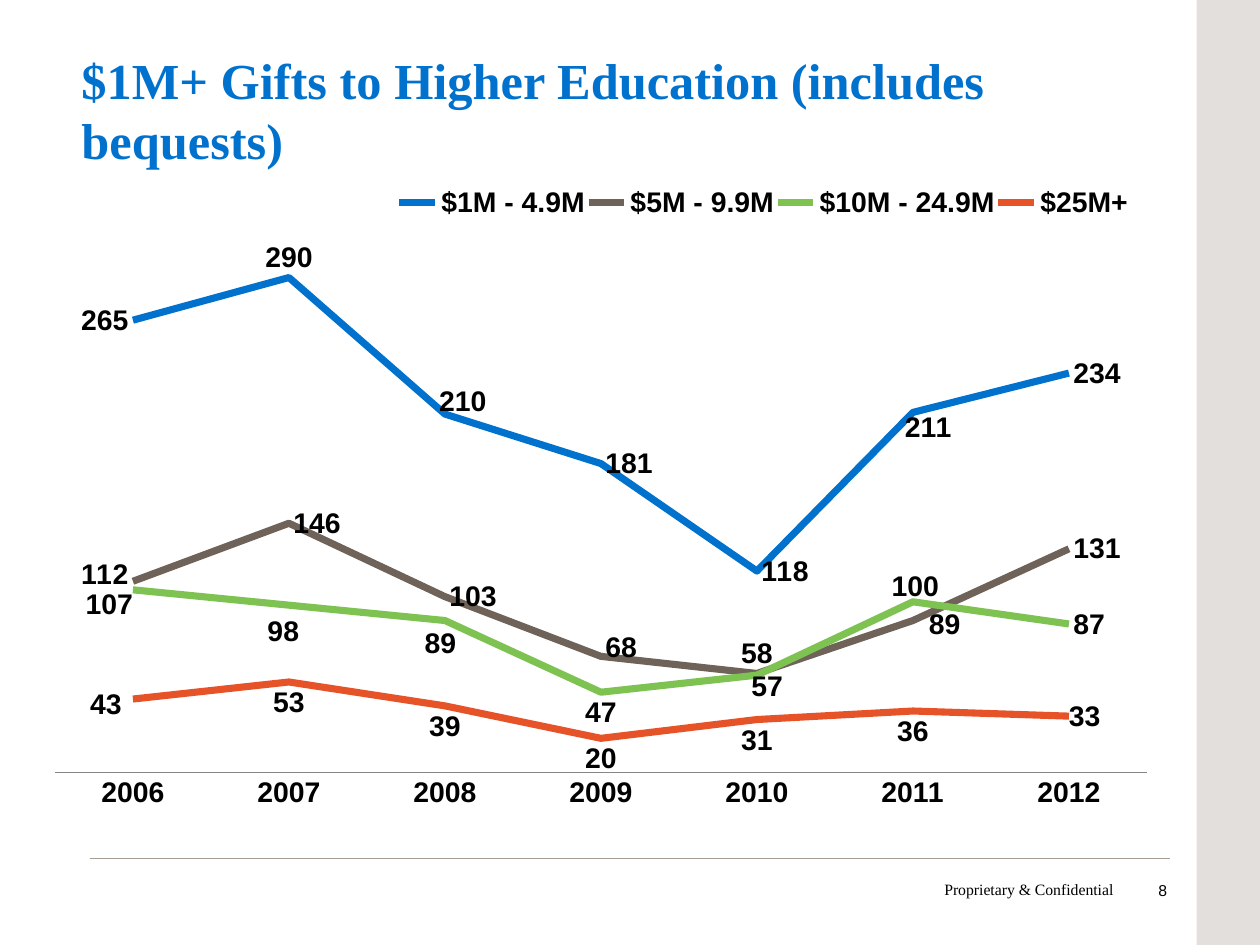
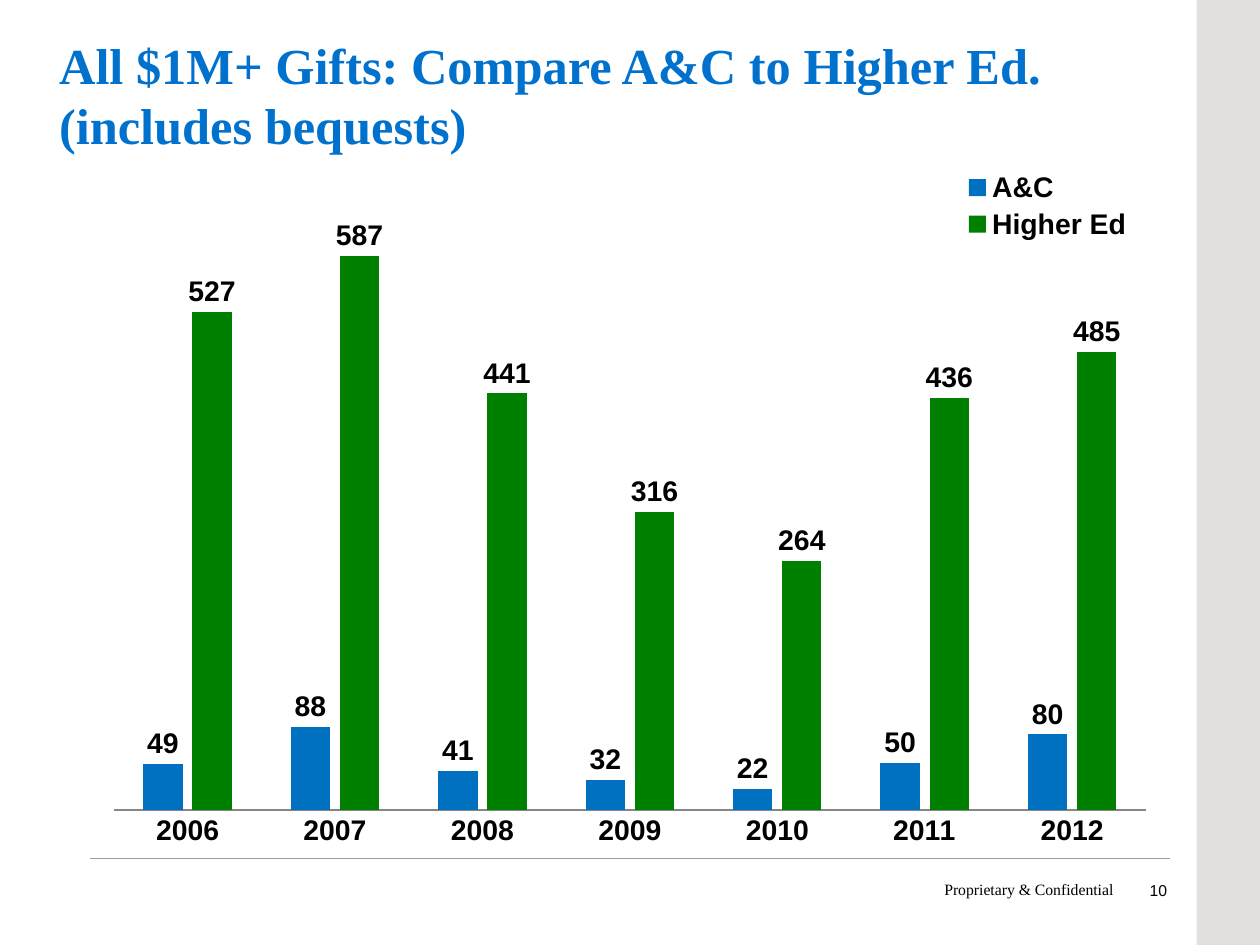
from pptx import Presentation
from pptx.chart.data import CategoryChartData
from pptx.dml.color import RGBColor
from pptx.enum.chart import XL_CHART_TYPE, XL_LABEL_POSITION, XL_LEGEND_POSITION, XL_MARKER_STYLE, XL_TICK_MARK
from pptx.enum.shapes import MSO_CONNECTOR, MSO_SHAPE
from pptx.enum.text import MSO_ANCHOR, MSO_AUTO_SIZE, PP_ALIGN
from pptx.oxml import parse_xml
from pptx.oxml.ns import nsdecls, qn
from pptx.util import Cm, Pt

SLIDE_WIDTH, SLIDE_HEIGHT = 28.22, 21.17
TITLE_BLUE, BLACK, BAND, RULE, AXIS = "0072CE", "000000", "E3DFDD", "A59C94", "868686"
SERIF, SANS = "Times New Roman", "Arial"
YEARS = [str(year) for year in range(2006, 2013)]
LEFT, RIGHT = XL_LABEL_POSITION.LEFT, XL_LABEL_POSITION.RIGHT
ABOVE, BELOW = XL_LABEL_POSITION.ABOVE, XL_LABEL_POSITION.BELOW

# Series: name, colour, values, default label position,
# and labels moved by point: position, shift right and down in percent of the chart
GIFT_SIZES = [
    ("$1M - 4.9M", "0072CE", (265, 290, 210, 181, 118, 211, 234), RIGHT,
     {0: (LEFT, 0, 0), 1: (ABOVE, 0, 0), 2: (RIGHT, -0.9, -1.8), 5: (RIGHT, -1.1, 2.1)}),
    ("$5M - 9.9M", "6E6259", (112, 146, 103, 68, 58, 89, 131), RIGHT,
     {0: (LEFT, 0, -0.9), 3: (RIGHT, 0, -1.2), 4: (ABOVE, 0, 0), 5: (RIGHT, 1, 0.6)}),
    ("$10M - 24.9M", "7EC352", (107, 98, 89, 47, 57, 100, 87), RIGHT,
     {0: (LEFT, 0.4, 2.1), 1: (BELOW, -0.5, 0.8), 2: (BELOW, -0.4, 0.4),
      3: (BELOW, 0, 0), 4: (BELOW, 0.9, -1.3), 5: (ABOVE, 0.2, 0.7)}),
    ("$25M+", "E75328", (43, 53, 39, 20, 31, 36, 33), BELOW,
     {0: (LEFT, -0.6, 0.7), 6: (RIGHT, -0.4, 0)}),
]
SECTORS = [
    ("A&C", "0070C0", (49, 88, 41, 32, 22, 50, 80), XL_LABEL_POSITION.OUTSIDE_END, {}),
    ("Higher Ed", "008000", (527, 587, 441, 316, 264, 436, 485), XL_LABEL_POSITION.OUTSIDE_END, {}),
]


def rgb(value):
    return RGBColor.from_string(value)


def box(left, top, width, height):
    return Cm(left), Cm(top), Cm(width), Cm(height)


def style_font(font, size=18, name=SANS, color=BLACK, bold=True):
    font.size, font.name, font.bold = Pt(size), name, bold
    font.color.rgb = rgb(color)


def write_text(shape, text, align=PP_ALIGN.LEFT, line_spacing=None, **font_format):
    frame = shape.text_frame
    frame.word_wrap = True
    frame.auto_size = MSO_AUTO_SIZE.NONE
    frame.vertical_anchor = MSO_ANCHOR.TOP
    paragraph = frame.paragraphs[0]
    paragraph.alignment = align
    paragraph.line_spacing = line_spacing
    run = paragraph.add_run()
    run.text = text
    style_font(run.font, **font_format)


# Slide frame
def add_frame(slide, number):
    band = slide.shapes.add_shape(MSO_SHAPE.RECTANGLE, *box(26.8, 0, SLIDE_WIDTH - 26.8, SLIDE_HEIGHT))
    band.shadow.inherit = False
    band.fill.solid()
    band.fill.fore_color.rgb = rgb(BAND)
    band.line.fill.background()

    rule = slide.shapes.add_connector(MSO_CONNECTOR.STRAIGHT, *box(2.01, 19.23, 26.21, 19.23))
    rule.line.color.rgb = rgb(RULE)
    rule.line.width = Pt(0.75)
    rule._element.spPr.append(parse_xml(f"<a:effectLst {nsdecls('a')}/>"))

    footer = slide.shapes.add_textbox(*box(20.9, 19.58, 4.6, 0.69))
    write_text(footer, "Proprietary & Confidential", size=10, name=SERIF, bold=False)
    page = slide.shapes.add_textbox(*box(24.74, 19.61, 1.65, 1.14))
    write_text(page, str(number), align=PP_ALIGN.RIGHT, size=10, bold=False)


def add_slide(presentation, title, left, top, number):
    slide = presentation.slides.add_slide(presentation.slide_layouts[5])
    add_frame(slide, number)
    heading = slide.shapes.title
    heading.left, heading.top, heading.width, heading.height = box(left, top, 25.07, 2.57)
    write_text(heading, title, line_spacing=Pt(38), size=32, name=SERIF, color=TITLE_BLUE)
    return slide


# Chart parts
def set_layout(parent, index, fields):
    """Place a chart part by hand; fields are (tag, value) pairs."""
    for old in parent.findall(qn("c:layout")):
        parent.remove(old)
    inner = "".join(f'<c:{tag} val="{value}"/>' for tag, value in fields)
    parent.insert(index, parse_xml(
        f"<c:layout {nsdecls('c')}><c:manualLayout>{inner}</c:manualLayout></c:layout>"))


def area_fields(area):
    return [("xMode", "edge"), ("yMode", "edge"), *zip("xywh", (round(part / 100, 4) for part in area))]


def label_series(series, position, moved):
    labels = series.data_labels
    labels.show_value = True
    labels.position = position
    style_font(labels.font)
    for leader in labels._element.findall(qn("c:showLeaderLines")):
        leader.set("val", "0")
    for index, (place, right, down) in moved.items():
        label = series.points[index].data_label
        label.position = place
        style_font(label.font)
        if right or down:
            element = series._element.xpath(f'c:dLbls/c:dLbl[c:idx/@val="{index}"]')[0]
            set_layout(element, 1, [("x", round(right / 100, 4)), ("y", round(down / 100, 4))])


def add_gift_chart(slide, chart_type, place, series_list, maximum, plot_area, legend_area):
    """Add a chart; plot and legend areas are left, top, width, height in percent of it."""
    data = CategoryChartData()
    data.categories = YEARS
    for name, _, values, _, _ in series_list:
        data.add_series(name, values)
    chart = slide.shapes.add_chart(chart_type, *box(*place), data).chart
    chart.has_title = False
    style_font(chart.font)

    # Axes
    values_axis, years_axis = chart.value_axis, chart.category_axis
    values_axis.minimum_scale, values_axis.maximum_scale = 0, maximum
    values_axis.has_major_gridlines = False
    values_axis.visible = False
    years_axis.major_tick_mark = XL_TICK_MARK.NONE
    years_axis.format.line.color.rgb = rgb(AXIS)
    years_axis.format.line.width = Pt(0.75)

    # Legend and plot area
    chart.has_legend = True
    chart.legend.position = XL_LEGEND_POSITION.TOP
    chart.legend.include_in_layout = False
    style_font(chart.legend.font)
    set_layout(chart.legend._element, 1, area_fields(legend_area))
    set_layout(chart._chartSpace.chart.plotArea, 0, [("layoutTarget", "inner"), *area_fields(plot_area)])

    # Series
    plot = chart.plots[0]
    plot.vary_by_categories = False
    for series, (_, color, _, position, moved) in zip(plot.series, series_list):
        if chart_type == XL_CHART_TYPE.LINE:
            series.smooth = False
            series.marker.style = XL_MARKER_STYLE.NONE
            series.format.line.color.rgb = rgb(color)
            series.format.line.width = Pt(4.5)
        else:
            series.format.fill.solid()
            series.format.fill.fore_color.rgb = rgb(color)
        label_series(series, position, moved)
    return chart


def main():
    presentation = Presentation()
    presentation.slide_width, presentation.slide_height = Cm(SLIDE_WIDTH), Cm(SLIDE_HEIGHT)

    # Gifts by size
    slide = add_slide(presentation, "$1M+ Gifts to Higher Education (includes bequests)", 1.57, 0.99, 8)
    add_gift_chart(slide, XL_CHART_TYPE.LINE, (0.71, 2.46, 25.48, 16), GIFT_SIZES, 300,
                   plot_area=(2.04, 21.1, 96, 71.7), legend_area=(32, 10.3, 64.7, 5.4))

    # Gifts by sector
    slide = add_slide(presentation, "All $1M+ Gifts: Compare A&C to Higher Ed. (includes bequests)",
                      1.07, 0.66, 10)
    chart = add_gift_chart(slide, XL_CHART_TYPE.COLUMN_CLUSTERED, (2.08, 1.85, 24.08, 17.48), SECTORS, 600,
                           plot_area=(1.95, 20.6, 96, 72.65), legend_area=(81, 10.8, 15.6, 10))
    chart.plots[0].gap_width = 150
    chart.plots[0].overlap = -25

    presentation.save("out.pptx")


if __name__ == "__main__":
    main()
